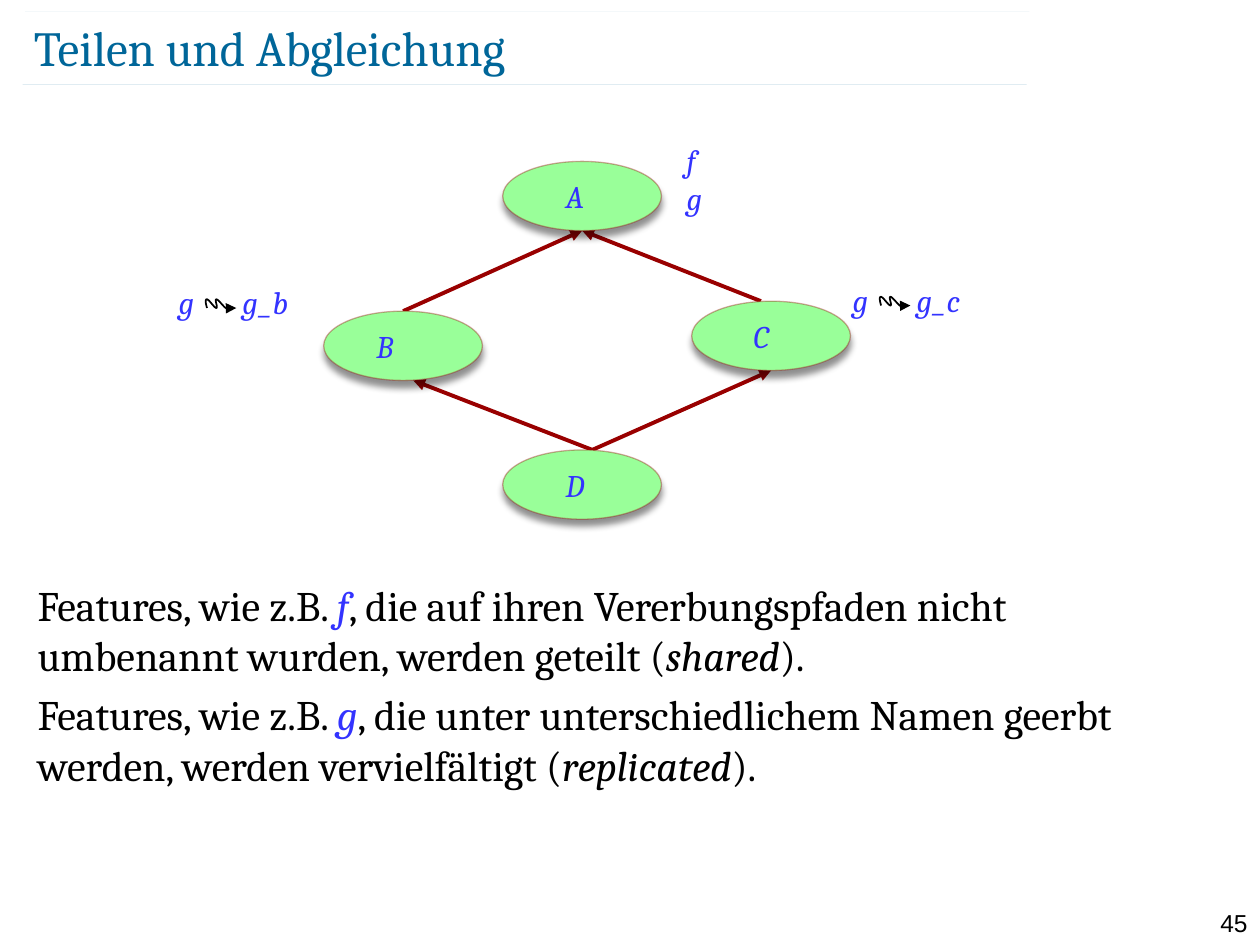
from dataclasses import dataclass

import lxml.etree
import pptx
import pptx.dml.color
import pptx.enum.shapes
import pptx.enum.text
import pptx.oxml
import pptx.oxml.ns
import pptx.util

Pt = pptx.util.Pt
qn = pptx.oxml.ns.qn


@dataclass(frozen=True)
class Theme:
    serif: str = "Cambria"
    sans: str = "Arial"
    heading: str = "006699"
    accent: str = "3333FF"
    ink: str = "000000"
    arrow: str = "990000"
    node: str = "99FF99"
    title_size: float = 28
    body_size: float = 24
    label_size: float = 18
    number_size: float = 14


THEME = Theme()
LABEL = {"name": THEME.serif, "size": Pt(THEME.label_size), "italic": True}
BODY = {"name": THEME.serif, "size": Pt(THEME.body_size), "italic": False}
NODE_SIZE = (90.72, 39.6)
NODES = {
    "A": (192.3, 15.2, 28.8),
    "D": (192.3, 180.1, 28.8),
    "B": (90, 100.8, 23),
    "C": (300.3, 95.1, 28.1),
}
EDGES = [("B", 0, "A", 0), ("C", -5.8, "A", 0), ("D", 5.8, "C", 0), ("D", 5.8, "B", 5.8)]
RENAMINGS = [("g_b", 0, 81.4), ("g_c", 385.2, 80)]
WAVE_START = (1.3, 5)
WAVE_CURVES = [
    ((0.6, 2.5), (0, 0), (1.2, 0)),
    ((2.4, 0), (5.5, 5), (6.6, 5)),
    ((7.8, 5), (5.4, 0), (6.6, 0)),
    ((7.8, 0), (10.8, 4.5), (12.3, 5.2)),
    ((14.2, 6.2), (17.2, 5.2), (18, 5)),
]


def rgb(color):
    return pptx.dml.color.RGBColor.from_string(color)


def apply(target, values):
    for name, value in values.items():
        setattr(target, name, value)


def add_span(para, text, color, values):
    span = para.add_run()
    span.text = text
    apply(span.font, values)
    span.font.color.rgb = rgb(color)


def add_text_box(page, box):
    frame = page.shapes.add_textbox(*map(Pt, box)).text_frame
    frame.word_wrap = True
    return frame


def style_line(line, color, width, opacity=None, arrow=False):
    line.color.rgb = rgb(color)
    line.width = Pt(width)
    outline = line._get_or_add_ln()
    if opacity is not None:
        tint = outline.find(".//" + qn("a:srgbClr"))
        lxml.etree.SubElement(tint, qn("a:alpha"), val=str(opacity * 1000))
    if arrow:
        lxml.etree.SubElement(outline, qn("a:tailEnd"), type="triangle")


def add_line(page, start, end, **style):
    line = page.shapes.add_connector(
        pptx.enum.shapes.MSO_CONNECTOR.STRAIGHT, *map(Pt, start + end))
    lxml.etree.SubElement(line._element.spPr, qn("a:effectLst"))
    style_line(line.line, **style)
    effects = line._element.spPr.find(qn("a:effectLst"))
    line._element.spPr.append(effects)


def add_title(page, box, text):
    left, top, width, height = box
    for x, y in ((left - 5, top - 2.9), (left - 6.5, top + 38.9)):
        add_line(page, (x, y), (x + 573.8, y), color=THEME.heading, width=0.1, opacity=35)
    title = page.shapes.title
    apply(title, dict(zip(("left", "top", "width", "height"), map(Pt, box))))
    frame = title.text_frame
    apply(frame, {
        "margin_left": 0, "margin_top": 0, "margin_right": 0, "margin_bottom": 0,
        "vertical_anchor": pptx.enum.text.MSO_ANCHOR.MIDDLE,
        "auto_size": pptx.enum.text.MSO_AUTO_SIZE.NONE,
    })
    para = frame.paragraphs[0]
    para.alignment = pptx.enum.text.PP_ALIGN.LEFT
    add_span(para, text, THEME.heading, {"name": THEME.serif, "size": Pt(THEME.title_size)})


def add_node(page, box):
    node = page.shapes.add_shape(pptx.enum.shapes.MSO_SHAPE.OVAL, *map(Pt, box))
    node.shadow.inherit = False
    node.fill.solid()
    node.fill.fore_color.rgb = rgb(THEME.node)
    style_line(node.line, THEME.arrow, 0.75, opacity=34)
    effects = node._element.spPr.find(qn("a:effectLst"))
    shadow = lxml.etree.SubElement(
        effects, qn("a:outerShdw"), blurRad=str(Pt(4)), dist=str(Pt(4)),
        dir="5400000", rotWithShape="0")
    tint = lxml.etree.SubElement(shadow, qn("a:srgbClr"), val=THEME.ink)
    lxml.etree.SubElement(tint, qn("a:alpha"), val="43000")


def wave_points(steps=8):
    start = WAVE_START
    for first, second, end in WAVE_CURVES:
        for step in range(1, steps + 1):
            t = step / steps
            weights = ((1 - t) ** 3, 3 * t * (1 - t) ** 2, 3 * t * t * (1 - t), t ** 3)
            yield tuple(
                sum(w * p[axis] for w, p in zip(weights, (start, first, second, end)))
                for axis in (0, 1))
        start = end


def add_renaming(page, box, new_name):
    left, top = box[:2]
    para = add_text_box(page, box).paragraphs[0]
    tabs = lxml.etree.SubElement(para._p.get_or_add_pPr(), qn("a:tabLst"))
    lxml.etree.SubElement(tabs, qn("a:tab"), pos=str(Pt(36.5)), algn="l")
    add_span(para, "g\t" + new_name, THEME.accent, LABEL)

    def place(point):
        return Pt(left + 22 + point[0]), Pt(top + 12.6 + point[1])

    builder = page.shapes.build_freeform(*place(WAVE_START))
    builder.add_line_segments([place(point) for point in wave_points()], close=False)
    wave = builder.convert_to_shape()
    wave.shadow.inherit = False
    wave.fill.background()
    style_line(wave.line, THEME.ink, 1, arrow=True)


def add_diagram(page, box):
    left, top = box[:2]
    width, height = NODE_SIZE
    for child, child_shift, parent, parent_shift in EDGES:
        start_x, start_y, _ = NODES[child]
        end_x, end_y, _ = NODES[parent]
        add_line(page,
                 (left + start_x + width / 2 + child_shift, top + start_y),
                 (left + end_x + width / 2 + parent_shift, top + end_y + height),
                 color=THEME.arrow, width=2.25, arrow=True)
    for name, (x, y, indent) in NODES.items():
        add_node(page, (left + x, top + y, width, height))
        frame = add_text_box(page, (left + x + indent, top + y + 5.6, 39.6, 28.8))
        add_span(frame.paragraphs[0], name, THEME.accent, LABEL)
    frame = add_text_box(page, (left + 290.2, top, 118.8, 51.1))
    add_span(frame.paragraphs[0], "f", THEME.accent, LABEL)
    add_span(frame.add_paragraph(), "g", THEME.accent, LABEL)
    for new_name, x, y in RENAMINGS:
        add_renaming(page, (left + x, top + y, 91.4, 28.8), new_name)


def add_body(page, box, statements):
    frame = add_text_box(page, box)
    for index, (feature, middle, term) in enumerate(statements):
        para = frame.add_paragraph() if index else frame.paragraphs[0]
        if index:
            para.space_before = Pt(4.8)
        for text, color, italic in (
                ("Features, wie z.B. ", THEME.ink, False), (feature, THEME.accent, True),
                (middle, THEME.ink, False), (term, THEME.ink, True), (").", THEME.ink, False)):
            add_span(para, text, color, BODY | {"italic": italic})


def add_page_number(page, box, number):
    para = add_text_box(page, box).paragraphs[0]
    para.alignment = pptx.enum.text.PP_ALIGN.RIGHT
    add_span(para, number, THEME.ink, {"name": THEME.sans, "size": Pt(THEME.number_size)})


def main():
    deck = pptx.Presentation()
    apply(deck, {"slide_width": Pt(720), "slide_height": Pt(540)})
    page = deck.slides.add_slide(deck.slide_layouts[5])
    add_title(page, (19.4, 9.4, 625.7, 34.6), "Teilen und Abgleichung")
    add_diagram(page, (95, 77, 477, 220))
    add_body(page, (14.4, 327.6, 686.2, 175), [
        ("f", ", die auf ihren Vererbungspfaden nicht umbenannt wurden, werden geteilt (",
         "shared"),
        ("g", ", die unter unterschiedlichem Namen geerbt werden, werden vervielfältigt (",
         "replicated"),
    ])
    add_page_number(page, (680.4, 515.5, 39.6, 17.3), "45")
    deck.save("out.pptx")


if __name__ == "__main__":
    main()
